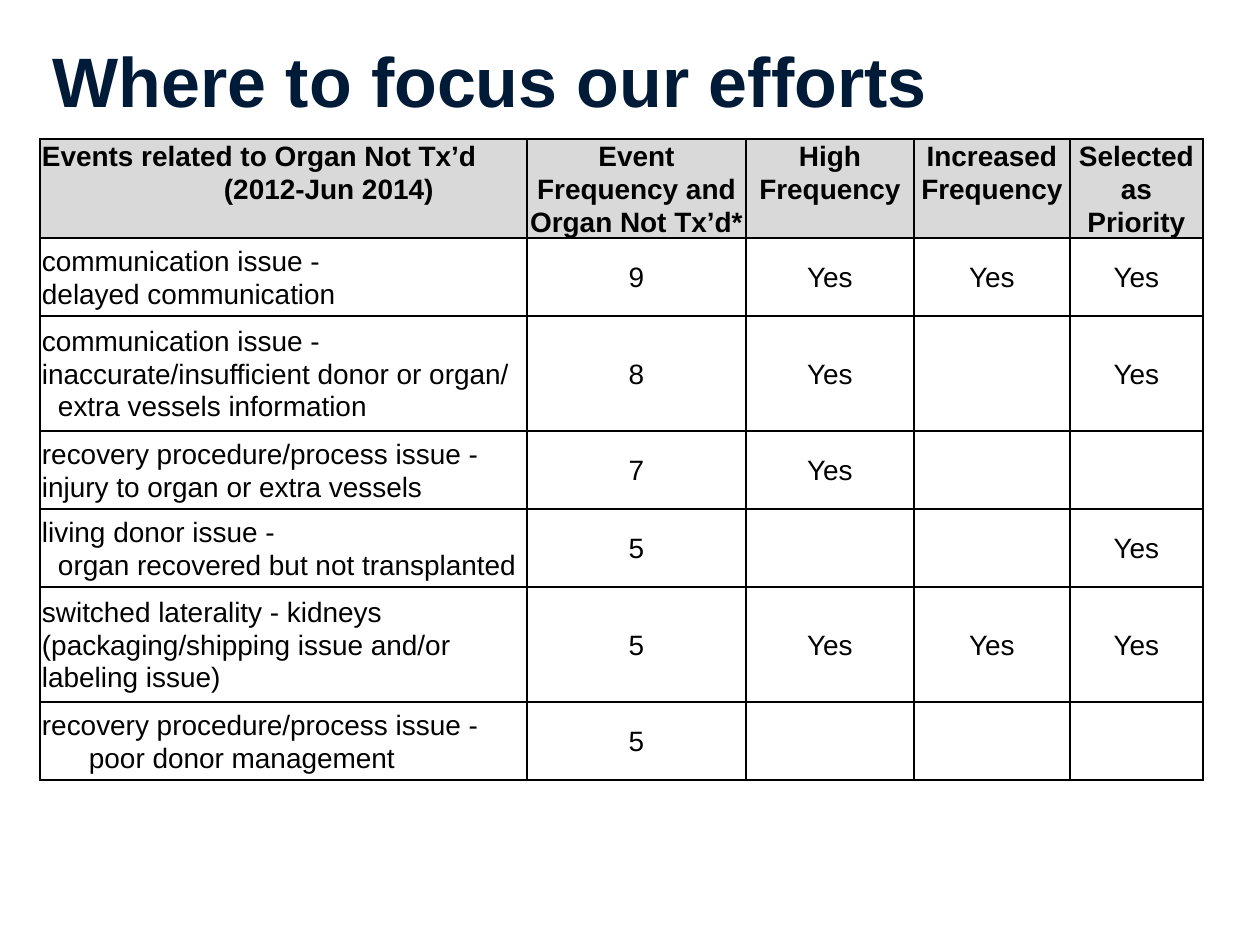
"""Build a slide with a table of event priorities."""
from dataclasses import dataclass

from lxml.etree import SubElement
from pptx import Presentation
from pptx.dml.color import RGBColor
from pptx.enum.text import MSO_ANCHOR, MSO_AUTO_SIZE, PP_ALIGN
from pptx.oxml.ns import qn
from pptx.util import Emu, Pt

SCALE = 914400 / 126
COLORS = {"title": "001B37", "text": "000000", "border": "000000",
          "header": "D9D9D9", "body": "FFFFFF"}
COLS = [487, 219, 168, 156, 133]
ROWS = [99, 78, 115, 78, 78, 115, 78]


@dataclass
class Line:
    text: str
    indent: int = 0


@dataclass
class Event:
    lines: list[Line]
    values: list[str]


HEADER = Event(
    [Line("Events related to Organ Not Tx’d"), Line("(2012-Jun 2014)", 182)],
    ["Event Frequency and Organ Not Tx’d*", "High Frequency",
     "Increased Frequency", "Selected as Priority"])
EVENTS = [
    Event([Line("communication issue -"), Line("delayed communication")],
          ["9", "Yes", "Yes", "Yes"]),
    Event([Line("communication issue -"),
           Line("inaccurate/insufficient donor or organ/"),
           Line("extra vessels information", 16)],
          ["8", "Yes", "", "Yes"]),
    Event([Line("recovery procedure/process issue -"),
           Line("injury to organ or extra vessels")],
          ["7", "Yes", "", ""]),
    Event([Line("living donor issue -"),
           Line("organ recovered but not transplanted", 16)],
          ["5", "", "", "Yes"]),
    Event([Line("switched laterality - kidneys"),
           Line("(packaging/shipping issue and/or"), Line("labeling issue)")],
          ["5", "Yes", "Yes", "Yes"]),
    Event([Line("recovery procedure/process issue -"),
           Line("poor donor management", 47)],
          ["5", "", "", ""]),
]


def px(n: int) -> Emu:
    return Emu(round(n * SCALE))


def rgb(name: str) -> RGBColor:
    return RGBColor.from_string(COLORS[name])


def set_attrs(obj, values: dict) -> None:
    for name, value in values.items():
        setattr(obj, name, value)


def set_font(font, size: int, bold: bool, color: str) -> None:
    set_attrs(font, {"name": "Arial", "size": Pt(size), "bold": bold})
    font.color.rgb = rgb(color)


def add_borders(cell) -> None:
    tc_pr = cell._tc.get_or_add_tcPr()
    for side in ("lnL", "lnR", "lnT", "lnB"):
        ln = SubElement(tc_pr, qn(f"a:{side}"), w=str(Pt(1)))
        fill = SubElement(ln, qn("a:solidFill"))
        SubElement(fill, qn("a:srgbClr"), val=COLORS["border"])


def fill_cell(cell, lines: list[Line], align: PP_ALIGN, header: bool) -> None:
    add_borders(cell)
    cell.fill.solid()
    cell.fill.fore_color.rgb = rgb("header" if header else "body")
    set_attrs(cell, {
        "margin_left": px(2), "margin_right": px(2),
        "margin_top": px(1), "margin_bottom": px(0),
        "vertical_anchor": MSO_ANCHOR.TOP if header else MSO_ANCHOR.MIDDLE})
    tf = cell.text_frame
    for i, line in enumerate(lines):
        p = tf.paragraphs[0] if i == 0 else tf.add_paragraph()
        set_attrs(p, {"alignment": align, "line_spacing": 1.05,
                      "space_after": Pt(6 if i == len(lines) - 1 else 0)})
        if line.indent:
            p._p.get_or_add_pPr().set("marL", str(px(line.indent)))
        if line.text:
            r = p.add_run()
            r.text = line.text
            set_font(r.font, 16, header, "text")


def add_title(slide, text: str) -> None:
    sp = slide.shapes.title
    set_attrs(sp, {"left": px(40), "top": px(21),
                   "width": px(1205), "height": px(117)})
    tf = sp.text_frame
    set_attrs(tf, {"text": text, "word_wrap": True,
                   "auto_size": MSO_AUTO_SIZE.NONE,
                   "vertical_anchor": MSO_ANCHOR.MIDDLE})
    p = tf.paragraphs[0]
    p.alignment = PP_ALIGN.LEFT
    set_font(p.runs[0].font, 40, True, "title")


def add_event_table(slide, events: list[Event]) -> None:
    table = slide.shapes.add_table(len(ROWS), len(COLS), px(40), px(139),
                                   px(sum(COLS)), px(sum(ROWS))).table
    table.horz_banding = False
    for col, width in zip(table.columns, COLS):
        col.width = px(width)
    for row, height in zip(table.rows, ROWS):
        row.height = px(height)
    for i, event in enumerate(events):
        fill_cell(table.cell(i, 0), event.lines, PP_ALIGN.LEFT, i == 0)
        for j, value in enumerate(event.values, 1):
            fill_cell(table.cell(i, j), [Line(value)], PP_ALIGN.CENTER, i == 0)


def main() -> None:
    prs = Presentation()
    set_attrs(prs, {"slide_width": px(1260), "slide_height": px(945)})
    slide = prs.slides.add_slide(prs.slide_layouts[5])
    add_title(slide, "Where to focus our efforts")
    add_event_table(slide, [HEADER, *EVENTS])
    prs.save("out.pptx")


if __name__ == "__main__":
    main()
